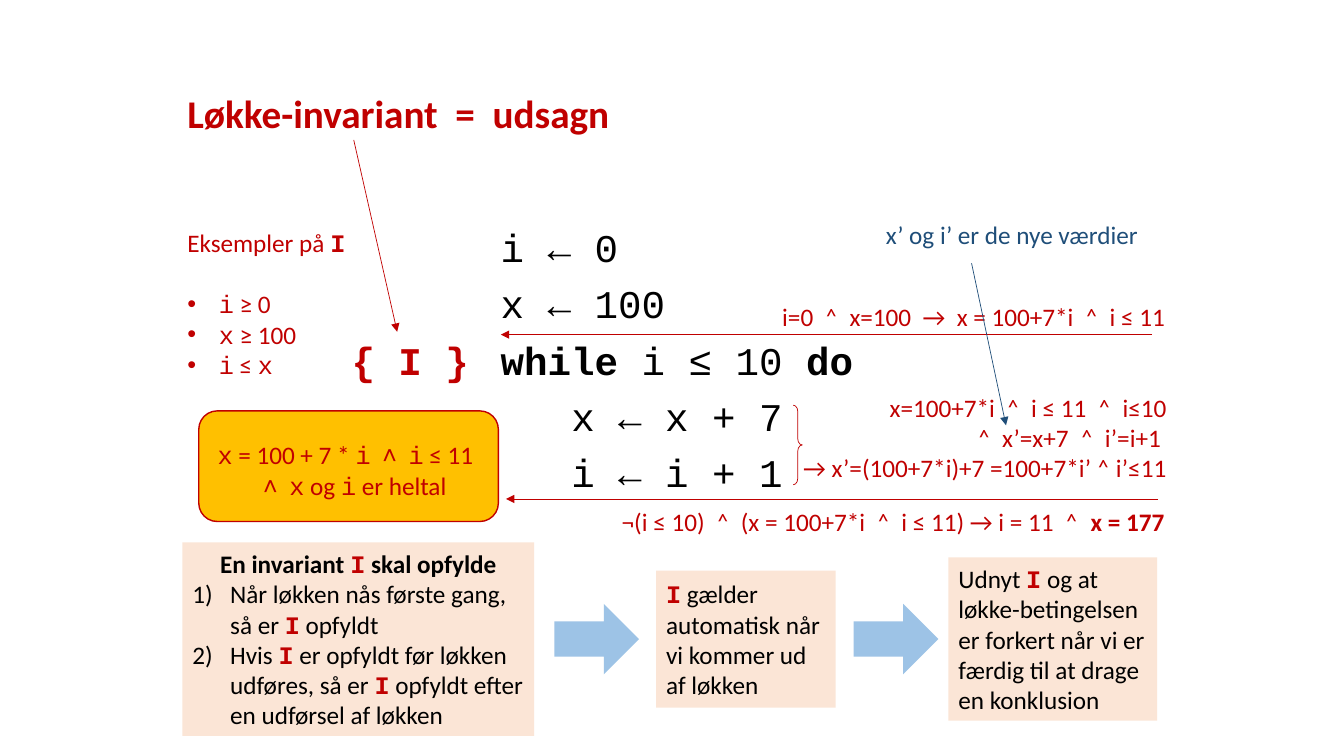
from lxml import etree
from pptx import Presentation
from pptx.dml.color import RGBColor
from pptx.enum import shapes as sh, text as tx
from pptx.oxml import ns
from pptx.util import Pt

RED, BLUE, BLACK = "C00000", "1F4E79", "000000"
GOLD, PEACH, SKY = "FFC000", "FBE5D6", "9DC3E6"
SANS, MONO = "Calibri", "Courier New"
LEFT, MID, RIGHT = tx.PP_ALIGN.LEFT, tx.PP_ALIGN.CENTER, tx.PP_ALIGN.RIGHT

# A style is (font, colour, bold)
PLAIN = (SANS, BLACK, False)
HEAD = (SANS, BLACK, True)
NOTE = (SANS, RED, False)
STRONG = (SANS, RED, True)
VAR = (MONO, RED, False)
INV = (MONO, RED, True)
CODE = (MONO, BLACK, False)
KEY = (MONO, BLACK, True)


def color(code):
    return RGBColor.from_string(code)


def write(frame, row, first):
    """Fill one paragraph; pieces between bars take the second style."""
    line, base, alt, opts = row
    par = frame.paragraphs[0] if first else frame.add_paragraph()
    par.alignment = opts.get("align", LEFT)
    par.space_before = Pt(opts.get("before", 0))
    if "spacing" in opts:
        par.line_spacing = opts["spacing"]
    pieces = line.split("|")
    if len(pieces) == 1:
        par.text = line
        styled = [(run, base) for run in par.runs]
    else:
        styled = []
        for n, piece in enumerate(pieces):
            if piece:
                run = par.add_run()
                run.text = piece
                styled.append((run, alt if n % 2 else base))
    for run, (name, hue, bold) in styled:
        run.font.name = name
        run.font.size = Pt(opts.get("size", 18))
        run.font.bold = bold
        run.font.color.rgb = color(hue)
    mark(par, opts)


def mark(par, opts):
    """Set the indent and the bullet or number."""
    props = par._p.get_or_add_pPr()
    hang = opts.get("hang", 0)
    props.set("marL", str(Pt(opts.get("indent", hang))))
    props.set("indent", str(-Pt(hang)))
    if "bullet" in opts:
        font = etree.SubElement(props, ns.qn("a:buFont"))
        font.set("typeface", "Arial")
        etree.SubElement(props, ns.qn("a:buChar")).set("char", opts["bullet"])
    elif "number" in opts:
        auto = etree.SubElement(props, ns.qn("a:buAutoNum"))
        auto.set("type", opts["number"])


def row(line, base, alt=None, **opts):
    return line, base, alt, opts


def fill_text(shape, rows):
    frame = shape.text_frame
    frame.word_wrap = True
    for n, item in enumerate(rows):
        write(frame, item, n == 0)


def label(slide, box, *rows):
    fill_text(slide.shapes.add_textbox(*map(Pt, box)), rows)


def block(slide, kind, box, fill=None, edge=None, width=1):
    shape = slide.shapes.add_shape(kind, *map(Pt, box))
    shape.shadow.inherit = False
    if fill:
        shape.fill.solid()
        shape.fill.fore_color.rgb = color(fill)
    else:
        shape.fill.background()
    if edge:
        shape.line.color.rgb = color(edge)
        shape.line.width = Pt(width)
    else:
        shape.line.fill.background()
    return shape


def card(slide, box, *rows):
    fill_text(block(slide, sh.MSO_SHAPE.RECTANGLE, box, PEACH), rows)


def arrow(slide, ends, hue):
    line = slide.shapes.add_connector(sh.MSO_CONNECTOR.STRAIGHT, *map(Pt, ends))
    line.line.color.rgb = color(hue)
    line.line.width = Pt(0.5)
    tail = etree.SubElement(line.line._get_or_add_ln(), ns.qn("a:tailEnd"))
    tail.set("type", "triangle")
    etree.SubElement(line._element.spPr, ns.qn("a:effectLst"))


def main():
    deck = Presentation()
    deck.slide_width, deck.slide_height = Pt(960), Pt(540)
    slide = deck.slides.add_slide(deck.slide_layouts[6])
    kind = sh.MSO_SHAPE

    # Proof that the loop body keeps the invariant
    block(slide, kind.ROUNDED_RECTANGLE, (142, 293.5, 214, 79), GOLD, RED)
    label(slide, (551, 276.5, 289.5, 73),
          row("x=100+7*i  ˄  i ≤ 11  ˄  i≤10\v˄  x’=x+7  ˄  i’=i+1 \v"
              "→ x’=(100+7*i)+7 =100+7*i’ ˄ i’≤11", NOTE, align=RIGHT))

    # Heading, examples and the chosen invariant
    dot = {"bullet": "•", "hang": 22.5}
    label(slide, (126.7, 60.5, 342.7, 303),
          row("Løkke-invariant  =  udsagn", STRONG, size=28),
          row("Eksempler på |I", NOTE, INV, before=65),
          row("|i| ≥ 0", NOTE, VAR, before=22, **dot),
          row("|x| ≥ 100", NOTE, VAR, **dot),
          row("|i| ≤ |x", NOTE, VAR, **dot),
          row("|x| = 100 + 7 * |i|  |˄|  |i| ≤ 11", NOTE, VAR, before=43,
              indent=21.6),
          row("|˄|  |x| og |i| er heltal", NOTE, VAR, indent=54))

    # Program
    step = {"size": 28, "spacing": 0.9, "before": 10}
    label(slide, (350.6, 159.8, 366.5, 214.6),
          row("i ← 0", CODE, **step),
          row("x ← 100", CODE, **step),
          row("|while| i ≤ 10 |do", CODE, KEY, **step),
          row("x ← x + 7", CODE, indent=50.4, **step),
          row("i ← i + 1", CODE, indent=50.4, **step))
    label(slide, (244, 237, 134, 41), row("{ I }", INV, size=28))
    arrow(slide, (252.7, 100, 283.7, 237), RED)

    # Requirements and consequences
    item = {"number": "arabicParenR", "hang": 27}
    card(slide, (130.3, 387.4, 251.3, 138.2),
         row("En invariant |I| skal opfylde", HEAD, INV, align=MID),
         row("Når løkken nås første gang, så er |I| opfyldt", PLAIN, INV, **item),
         row("Hvis |I| er opfyldt før løkken udføres, så er |I| opfyldt efter "
             "en udførsel af løkken", PLAIN, INV, **item))
    card(slide, (468.7, 407.5, 128.2, 98),
         row("|I| gælder automatisk når vi kommer ud af løkken", PLAIN, INV))
    card(slide, (677.5, 398.2, 149, 116.6),
         row("Udnyt |I| og at løkke-betingelsen er forkert når vi er færdig "
             "til at drage en konklusion", PLAIN, INV))
    for left in (396, 609.8):
        block(slide, kind.RIGHT_ARROW, (left, 431.3, 60.5, 50.4), SKY)

    # Claims before and after the loop
    arrow(slide, (823, 239, 357.8, 239), RED)
    label(slide, (432.7, 211.7, 406.8, 29),
          row("i=0  ˄  x=100  →  x = 100+7*i  ˄  i ≤ 11", NOTE, align=RIGHT))
    arrow(slide, (827.3, 356.4, 361.4, 356.4), RED)
    label(slide, (396, 357.8, 442.8, 29),
          row("¬(i ≤ 10)  ˄  (x = 100+7*i  ˄  i ≤ 11) → i = 11  ˄  |x = 177",
              NOTE, STRONG, align=RIGHT))
    brace = block(slide, kind.RIGHT_BRACE, (566.6, 289.4, 6.5, 56.9),
                  edge=RED, width=0.5)
    brace.adjustments[0] = 0.69

    # Remark on the new values
    label(slide, (609.8, 153.4, 226, 29),
          row("x’ og i’ er de nye værdier", (SANS, BLUE, False), align=MID))
    arrow(slide, (694, 188, 718.6, 303.8), BLUE)

    deck.save("out.pptx")


if __name__ == "__main__":
    main()
